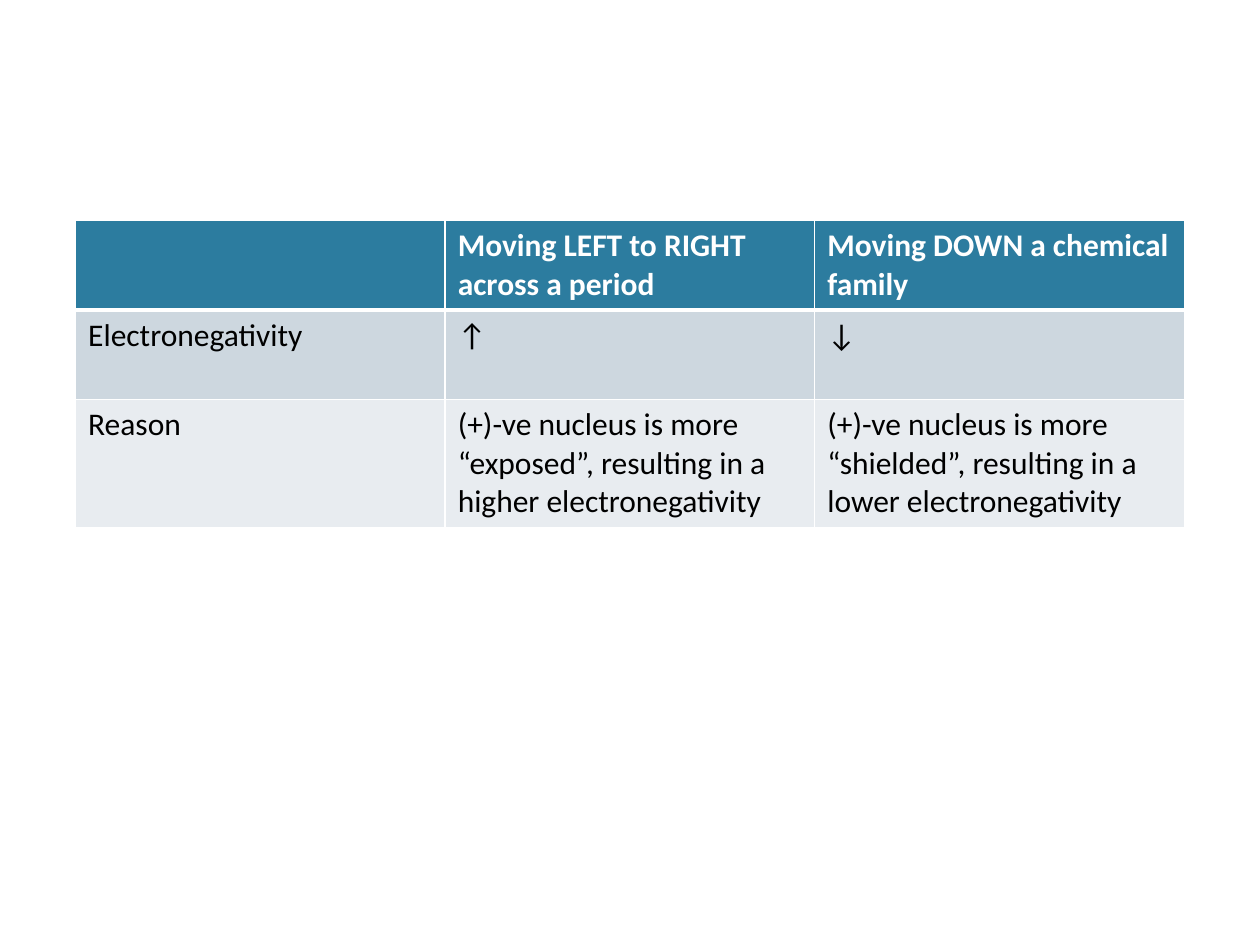
from lxml.etree import SubElement
from pptx import Presentation
from pptx.dml.color import RGBColor as RGB
from pptx.oxml.ns import qn
from pptx.util import Inches, Pt

COLORS = {
    "header": "2C7C9F",
    "trend": "CDD7DF",
    "reason": "E8ECF0",
    "border": "FFFFFF",
    "header_text": "FFFFFF",
    "body_text": "000000",
}

TRENDS = [
    ("header", 0.7, ["", "Moving LEFT to RIGHT across a period",
                     "Moving DOWN a chemical family"]),
    ("trend", 0.71, ["Electronegativity", "↑", "↓"]),
    ("reason", 1.01, [
        "Reason",
        "(+)-ve nucleus is more “exposed”, resulting in a higher electronegativity",
        "(+)-ve nucleus is more “shielded”, resulting in a lower electronegativity",
    ]),
]


class SlideBuilder:
    font = "Calibri"
    size = Pt(18)

    def __init__(self, slide):
        self.slide = slide

    def border(self, cell, side, width):
        properties = cell._tc.get_or_add_tcPr()
        line = SubElement(properties, qn(f"a:ln{side}"), w=str(Pt(width)))
        fill = SubElement(line, qn("a:solidFill"))
        SubElement(fill, qn("a:srgbClr"), val=COLORS["border"])

    def cell(self, cell, wording, role, edges):
        for side, width in edges.items():
            self.border(cell, side, width)
        cell.fill.solid()
        cell.fill.fore_color.rgb = RGB.from_string(COLORS[role])
        if not wording:
            return
        is_header = role == "header"
        run = cell.text_frame.paragraphs[0].add_run()
        run.text = wording
        run.font.name = self.font
        run.font.size = self.size
        run.font.bold = is_header
        text_color = COLORS["header_text" if is_header else "body_text"]
        run.font.color.rgb = RGB.from_string(text_color)

    def table(self, left, top, width, rows):
        height = sum(row_height for _, row_height, _ in rows)
        columns = len(rows[0][2])
        table = self.slide.shapes.add_table(
            len(rows), columns, Inches(left), Inches(top),
            Inches(width), Inches(height)).table
        for column in table.columns:
            column.width = Inches(width / columns)
        for index, (role, row_height, wordings) in enumerate(rows):
            table.rows[index].height = Inches(row_height)
            edges = {"L": 1, "R": 1, "T": 3 if index == 1 else 1,
                     "B": 3 if index == 0 else 1}
            for column, wording in enumerate(wordings):
                self.cell(table.cell(index, column), wording, role, edges)


def main():
    deck = Presentation()
    deck.slide_width = Inches(10)
    deck.slide_height = Inches(7.5)
    builder = SlideBuilder(deck.slides.add_slide(deck.slide_layouts[6]))
    builder.table(0.6, 1.75, 8.8, TRENDS)
    deck.save("out.pptx")


if __name__ == "__main__":
    main()
